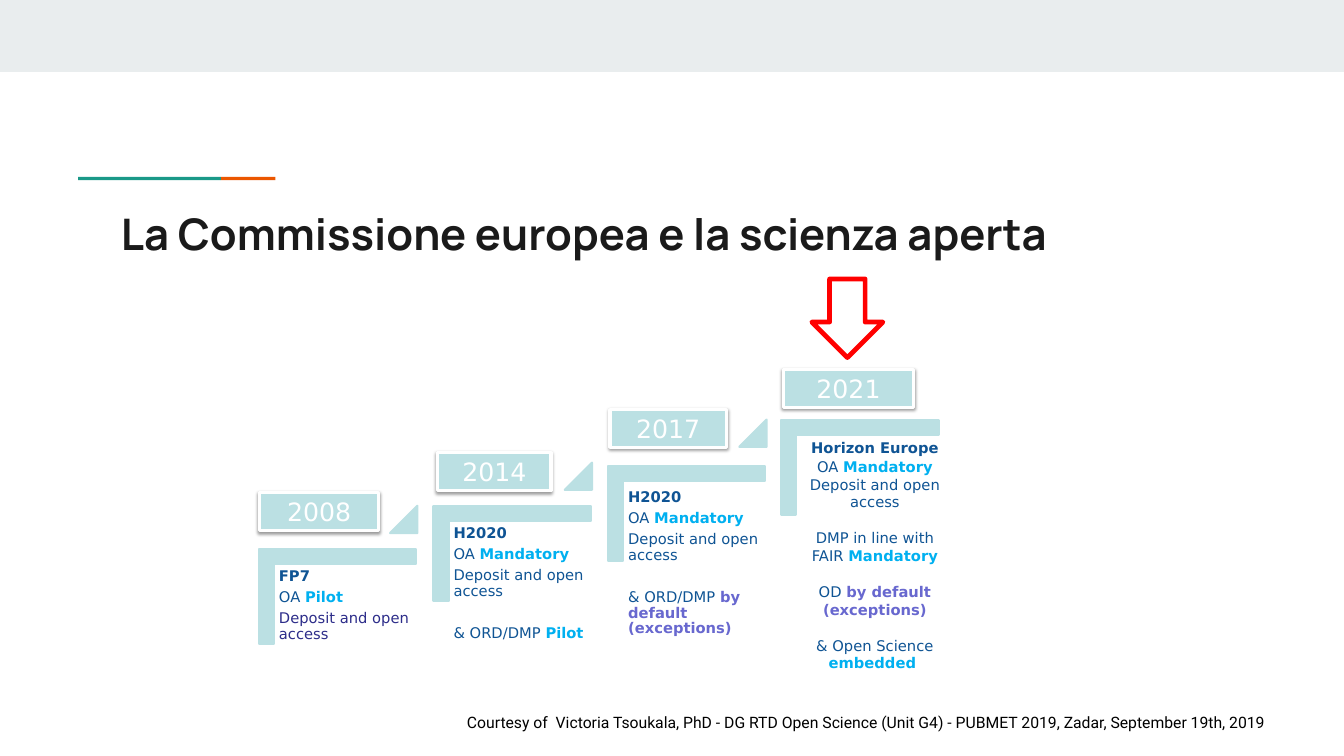
from lxml.etree import SubElement
from pptx import Presentation
from pptx.dml.color import RGBColor
from pptx.enum.shapes import MSO_SHAPE as Form
from pptx.enum.text import MSO_ANCHOR as Anchor, PP_ALIGN as Align
from pptx.oxml.ns import qn
from pptx.util import Pt

WHITE = RGBColor(0xFF, 0xFF, 0xFF)
BLACK = RGBColor(0, 0, 0)
INK = RGBColor(0x1A, 0x1A, 0x1A)
GREY = RGBColor(0xE9, 0xED, 0xEE)
GREEN = RGBColor(0x1A, 0x99, 0x88)
ORANGE = RGBColor(0xEB, 0x56, 0x00)
PALE = RGBColor(0xBB, 0xE0, 0xE3)
NAVY = RGBColor(0x0F, 0x54, 0x94)
INDIGO = RGBColor(0x2D, 0x2D, 0x8A)
SKY = RGBColor(0x00, 0xB0, 0xF0)
VIOLET = RGBColor(0x68, 0x68, 0xCF)
RED = RGBColor(0xFF, 0, 0)

GAP = 4.9    # space between lines of a step
BREAK = 24.5  # space before a separate block of a step
WIDE = 17.5  # space before a block of the last step

# Paragraphs: space before, then runs of (text, colour, bold)
OPEN = (GAP, ("Deposit and open access", NAVY, False))
MUST = ("OA ", NAVY, False), ("Mandatory", SKY, True)
ORD = ("& ORD/DMP ", NAVY, False)
FP7 = [
    (0, ("FP7", NAVY, True)),
    (GAP, ("OA ", NAVY, False), ("Pilot", SKY, True)),
    (GAP, ("Deposit and open access", INDIGO, False)),
]
PILOT = [
    (0, ("H2020", NAVY, True)),
    (GAP, *MUST),
    OPEN,
    (BREAK, ORD, ("Pilot", SKY, True)),
]
DEFAULT = PILOT[:3] + [
    (BREAK, ORD, ("by default", VIOLET, True)),
    (0, ("(exceptions)", VIOLET, True)),
]
EUROPE = [
    (0, ("Horizon Europe", NAVY, True)),
    (1, *MUST),
    (0, OPEN[1]),
    (WIDE, ("DMP in line with FAIR ", NAVY, False), ("Mandatory", SKY, True)),
    (WIDE, ("OD ", NAVY, False), ("by default (exceptions)", VIOLET, True)),
    (WIDE, ("& Open Science ", NAVY, False), ("embedded ", SKY, True)),
]

# Corner left and top, text top, triangle top, words
STEPS = [
    (246.6, 523, 537.8, 481.7, FP7),
    (412.9, 482, 496.8, 440.6, PILOT),
    (579.2, 443.9, 462.2, 399.6, DEFAULT),
    (744.1, 400, None, None, None),
]
# Year, left, top, width
YEARS = [
    ("2008", 247, 469.4, 113.8),
    ("2014", 416.9, 431.3, 108),
    ("2017", 581, 390.2, 110.9),
    ("2021", 745.9, 352.1, 124.6),
]


def write(shape, paras, font="DejaVu Sans", size=14, align=Align.LEFT,
          anchor=Anchor.TOP, inset=(0, 0), lead=None):
    frame = shape.text_frame
    frame.word_wrap = True
    frame.vertical_anchor = anchor
    frame.margin_left = frame.margin_right = Pt(inset[0])
    frame.margin_top = frame.margin_bottom = Pt(inset[1])
    for i, (before, *runs) in enumerate(paras):
        para = frame.add_paragraph() if i else frame.paragraphs[0]
        para.alignment = align
        para.space_before = Pt(before)
        if lead:
            para.line_spacing = lead
        for words, color, bold in runs:
            run = para.add_run()
            run.text = words
            run.font.name = font
            run.font.size = Pt(size)
            run.font.bold = bold
            run.font.color.rgb = color


def text(slide, left, top, width, height, paras, **style):
    box = slide.shapes.add_textbox(Pt(left), Pt(top), Pt(width), Pt(height))
    write(box, paras, **style)


def draw(slide, form, left, top, width, height, fill=None, line=None,
         weight=2, adjust=()):
    shape = slide.shapes.add_shape(form, Pt(left), Pt(top), Pt(width), Pt(height))
    shape.shadow.inherit = False
    for i, value in enumerate(adjust):
        shape.adjustments[i] = value
    if fill is None:
        shape.fill.background()
    else:
        shape.fill.solid()
        shape.fill.fore_color.rgb = fill
    if line is None:
        shape.line.fill.background()
    else:
        shape.line.color.rgb = line
        shape.line.width = Pt(weight)
    return shape


def shade(shape):
    """Add a soft shadow below the shape."""
    effects = shape._element.spPr.find(qn("a:effectLst"))
    outer = SubElement(effects, qn("a:outerShdw"), blurRad=str(Pt(3.1)),
                       dist=str(Pt(1.6)), dir="5400000", rotWithShape="0")
    color = SubElement(outer, qn("a:srgbClr"), val="000000")
    SubElement(color, qn("a:alpha"), val="38000")


def corner(slide, left, top):
    """Draw an L turned a quarter, given its place after the turn."""
    wide, high = 149.8, 90
    turn = (wide - high) / 2
    shape = draw(slide, Form.CORNER, left + turn, top - turn, high, wide,
                 PALE, PALE, adjust=(0.16, 0.16))
    shape.rotation = 90


def step(slide, left, top, low, peak, words):
    corner(slide, left, top)
    if words:
        text(slide, left + 14.8, low, 135.2, 118.8, words,
             inset=(4.3, 4.3), lead=0.9)
        draw(slide, Form.ISOSCELES_TRIANGLE, left + 125, peak, 26, 26,
             PALE, PALE, adjust=(1,))


def year(slide, label, left, top, width):
    box = draw(slide, Form.RECTANGLE, left, top, width, 36, PALE, WHITE, 3)
    shade(box)
    write(box, [(0, (label, WHITE, False))], size=24, align=Align.CENTER,
          anchor=Anchor.MIDDLE, inset=(7.2, 3.6))


def main():
    deck = Presentation()
    deck.slide_width, deck.slide_height = Pt(1280.16), Pt(720)
    slide = deck.slides.add_slide(deck.slide_layouts[6])

    draw(slide, Form.RECTANGLE, 0, 0, 1280.16, 68.4, GREY)
    draw(slide, Form.RECTANGLE, 210.5, 168.5, 51.8, 3, ORANGE)
    draw(slide, Form.RECTANGLE, 74.3, 168.5, 136.2, 3, GREEN)
    credit = ("Courtesy of  Victoria Tsoukala, PhD - DG RTD Open Science "
              "(Unit G4) - PUBMET 2019, Zadar, September 19th, 2019")
    text(slide, 414.7, 673.2, 820.8, 29.5, [(0, (credit, BLACK, False))],
         font="Roboto", size=15, align=Align.CENTER, anchor=Anchor.MIDDLE)

    for item in STEPS:
        step(slide, *item)
    text(slide, 762.5, 414.7, 141.8, 239, EUROPE, align=Align.CENTER,
         inset=(7.2, 3.6))
    for item in YEARS:
        year(slide, *item)

    draw(slide, Form.DOWN_ARROW, 773.3, 265.7, 67.7, 74.9, line=RED,
         weight=4.5, adjust=(0.5, 0.5))
    title = "La Commissione europea e la scienza aperta"
    text(slide, 102.2, 184.3, 1076.4, 74.9, [(0, (title, INK, True))],
         font="Manrope", size=41.4, inset=(13, 13))
    deck.save("out.pptx")


if __name__ == "__main__":
    main()
